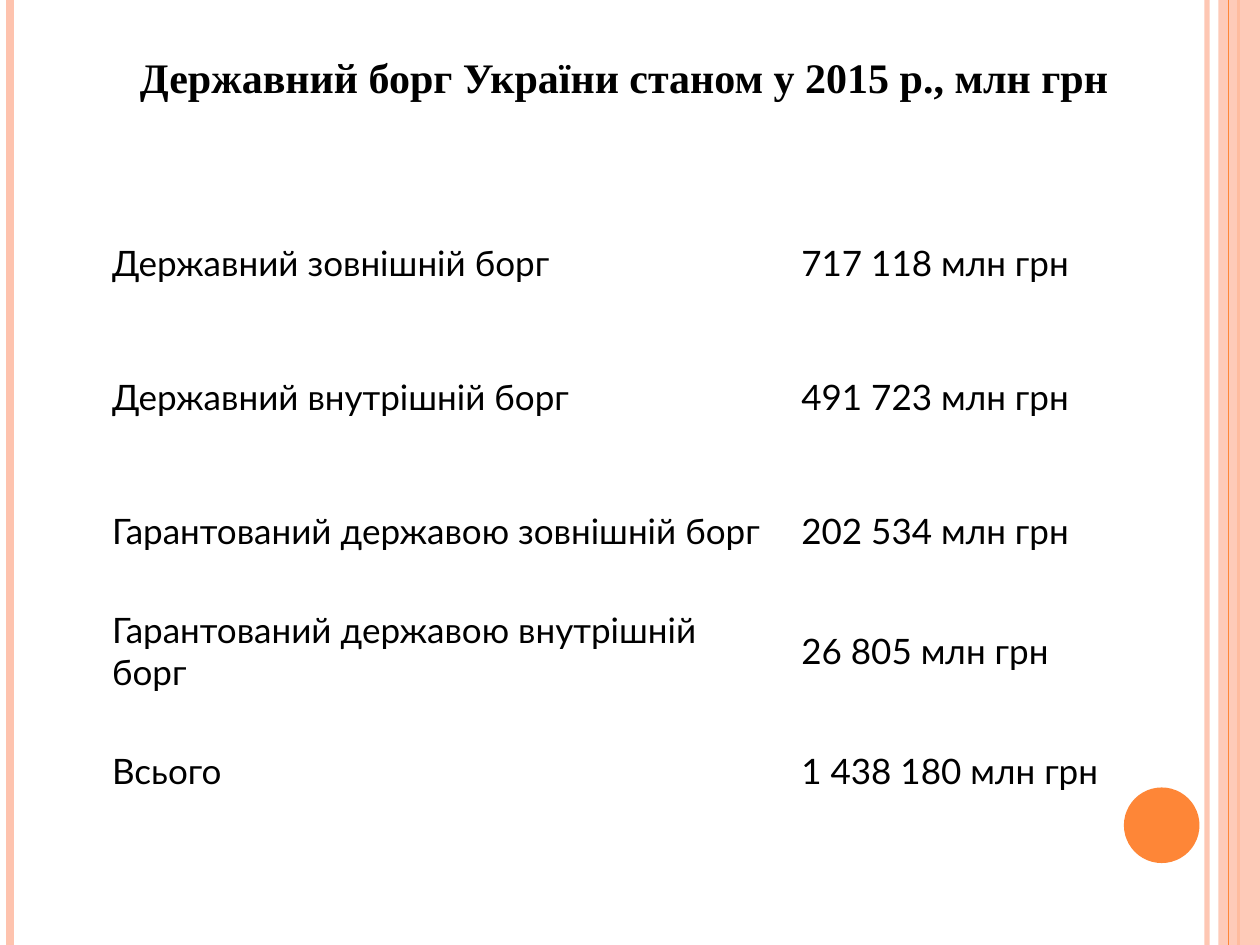
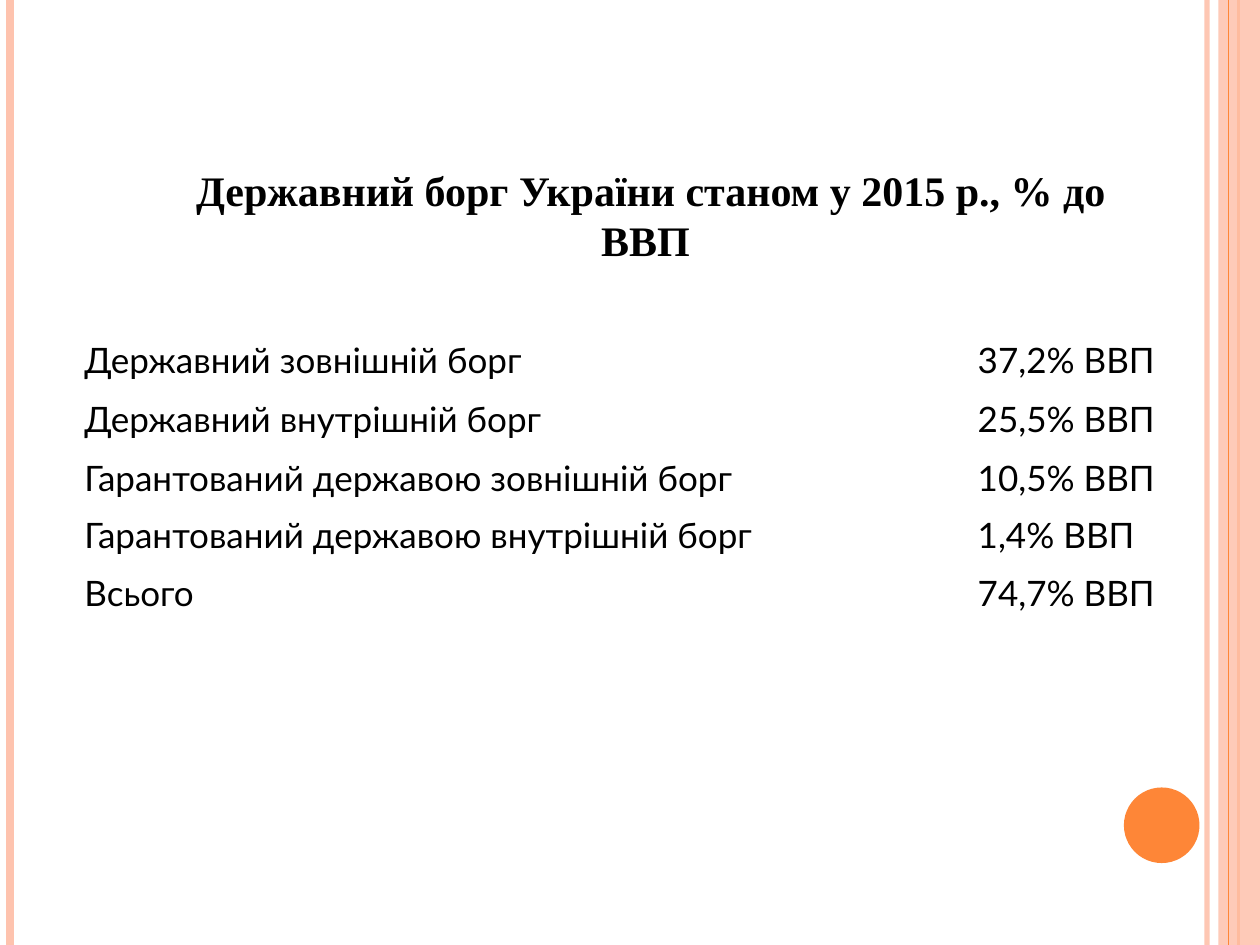
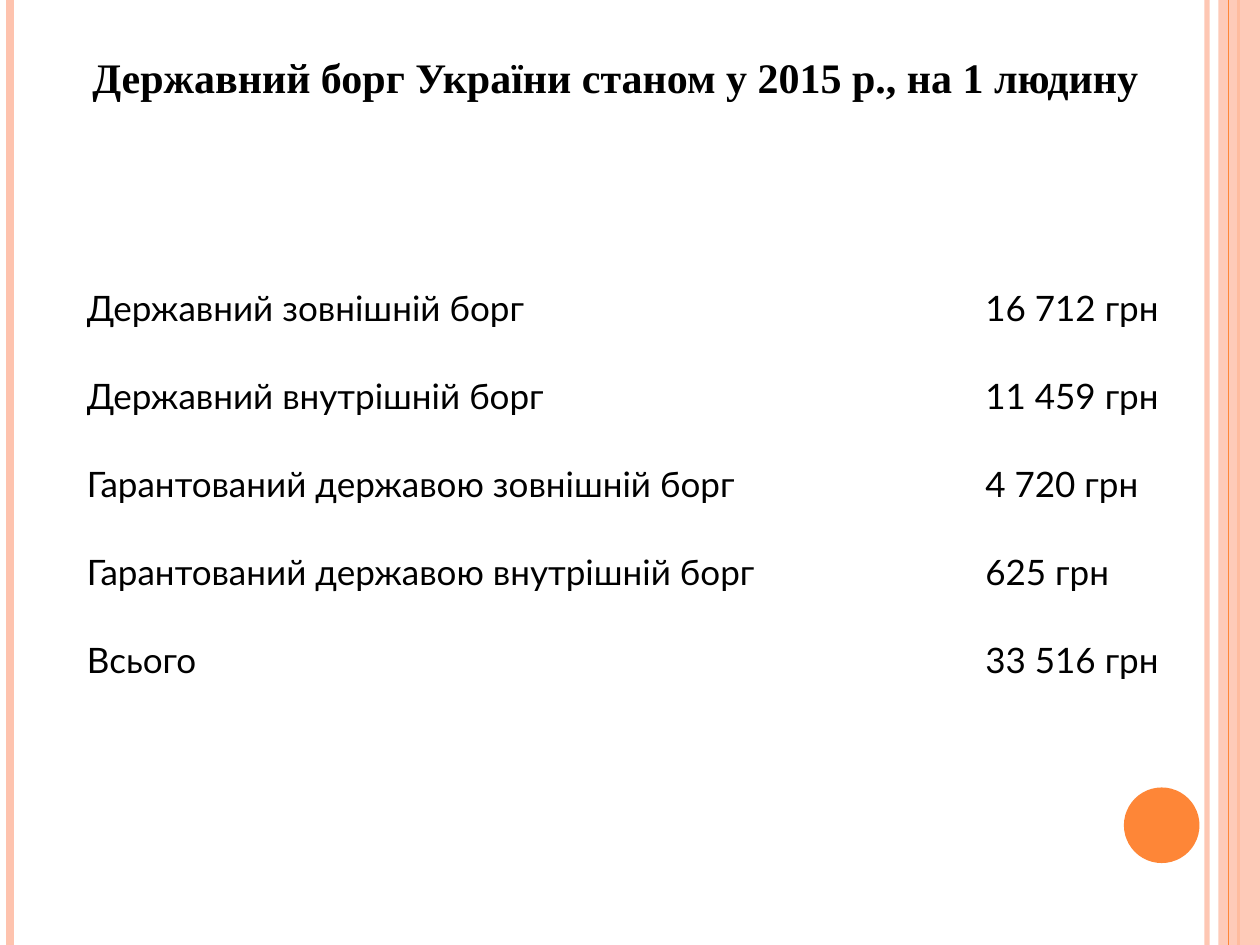
from pptx import Presentation
from pptx.dml.color import RGBColor
from pptx.enum.shapes import MSO_CONNECTOR, MSO_SHAPE
from pptx.enum.text import MSO_ANCHOR, MSO_AUTO_SIZE, PP_ALIGN
from pptx.oxml.ns import qn
from pptx.util import Inches, Pt
from lxml import etree

# Shared look
PEACH = RGBColor(0xFE, 0xC3, 0xAE)
ORANGE = RGBColor(0xFE, 0x86, 0x37)
BLACK = RGBColor(0, 0, 0)
TITLE_FONT, BODY_FONT = "Times New Roman", "Lato"
NO_GRID_STYLE = "{2D5ABB26-0587-4C30-8999-92F81FD0307C}"
SLIDE_W, SLIDE_H = 10, 7.5
DEBT_KINDS = [
    "Державний зовнішній борг",
    "Державний внутрішній борг",
    "Гарантований державою зовнішній борг",
    "Гарантований державою внутрішній борг",
    "Всього",
]


def box_inches(box):
    return [Inches(v) for v in box]


def set_opacity(shape, percent):
    color = shape.element.xpath(".//p:spPr//a:srgbClr")[0]
    etree.SubElement(color, qn("a:alpha")).set("val", str(percent * 1000))


def add_rule(s, x, color, width):
    rule = s.shapes.add_connector(
        MSO_CONNECTOR.STRAIGHT, Inches(x), 0, Inches(x), Inches(SLIDE_H))
    rule.line.color.rgb = color
    rule.line.width = Pt(width)
    etree.SubElement(rule.element.spPr, qn("a:effectLst"))
    return rule


def add_solid(s, kind, box, color):
    sp = s.shapes.add_shape(kind, *box_inches(box))
    sp.shadow.inherit = False
    sp.fill.solid()
    sp.fill.fore_color.rgb = color
    sp.line.fill.background()
    return sp


def decorate_layout(s):
    """Draw the side bands and the dot, then move them to the slide's layout."""
    thin_rule = add_rule(s, 9.58, PEACH, 3)
    set_opacity(thin_rule, 93)
    left_rule = add_rule(s, 0.08, PEACH, 4.5)
    band_rule = add_rule(s, 9.83, ORANGE, 1.5)
    band = add_solid(s, MSO_SHAPE.RECTANGLE, (9.67, 0, 0.33, SLIDE_H), PEACH)
    set_opacity(band, 87)
    inner_rule = add_rule(s, 9.75, ORANGE, 0.75)
    dot = add_solid(s, MSO_SHAPE.OVAL, (8.92, 6.25, 0.6, 0.6), ORANGE)

    parts = [thin_rule, left_rule, band_rule, band, inner_rule, dot]
    for shape_id, part in enumerate(parts, start=101):
        part.element.xpath(".//p:cNvPr")[0].set("id", str(shape_id))
        s.slide_layout.shapes.element.append(part.element)


def add_run(p, text, font, size, bold=False):
    r = p.add_run()
    r.text = text
    r.font.name = font
    r.font.size = Pt(size)
    r.font.bold = bold
    r.font.color.rgb = BLACK


def place_title(s, text, box, anchor):
    title = s.shapes.title
    title.left, title.top, title.width, title.height = box_inches(box)
    tf = title.text_frame
    tf.word_wrap = True
    tf.auto_size = MSO_AUTO_SIZE.NONE
    tf.vertical_anchor = anchor
    p = tf.paragraphs[0]
    p.alignment = PP_ALIGN.CENTER
    add_run(p, text, TITLE_FONT, 24, bold=True)


def add_debt_table(s, left, top, cols, rows, values):
    """Blank first row and column, then one row for each kind of debt."""
    box = (left, top, sum(cols), sum(rows))
    frame = s.shapes.add_table(len(rows), len(cols), *box_inches(box))
    frame.element.xpath(".//a:tableStyleId")[0].text = NO_GRID_STYLE
    table = frame.table
    table.first_row = table.horz_banding = False
    for col, width in zip(table.columns, cols):
        col.width = Inches(width)
    for row, height in zip(table.rows, rows):
        row.height = Inches(height)
    for cell in table.iter_cells():
        cell.fill.background()
        cell.vertical_anchor = MSO_ANCHOR.MIDDLE
    for i, texts in enumerate(zip(DEBT_KINDS, values), start=1):
        for j, text in enumerate(texts, start=1):
            add_run(table.cell(i, j).text_frame.paragraphs[0],
                    text, BODY_FONT, 20)


def add_debt_slide(prs, title, title_box, table, anchor=MSO_ANCHOR.TOP):
    s = prs.slides.add_slide(prs.slide_layouts[5])
    place_title(s, title, title_box, anchor)
    add_debt_table(s, **table)
    return s


def main():
    prs = Presentation()
    prs.slide_width, prs.slide_height = Inches(SLIDE_W), Inches(SLIDE_H)

    # Debt in millions of hryvnias
    s = add_debt_slide(
        prs, "Державний борг України станом у 2015 р., млн грн ",
        (0.43, 0.36, 9.13, 0.5),
        dict(left=0.5, top=1.07, cols=[0.29, 5.47, 3.46],
             rows=[0.54, 0.95, 1.18, 0.95, 0.95, 0.95],
             values=[f"{v} млн грн" for v in (
                 "717 118", "491 723", "202 534", "26 805", "1 438 180")]))
    decorate_layout(s)

    # Debt as a share of GDP
    add_debt_slide(
        prs, "Державний борг України станом у 2015 р., % до ВВП ",
        (1.22, 1.25, 7.89, 0.91),
        dict(left=0.28, top=2.18, cols=[0.29, 7.09, 1.83],
             rows=[0.44, 0.47, 0.47, 0.47, 0.44, 0.47],
             values=[f"{v}% ВВП" for v in (
                 "37,2", "25,5", "10,5", "1,4", "74,7")]),
        anchor=MSO_ANCHOR.MIDDLE)

    # Debt per person
    add_debt_slide(
        prs, "Державний борг України станом у 2015 р., на 1 людину ",
        (0.28, 0.36, 9.29, 0.5),
        dict(left=0.3, top=1.39, cols=[0.29, 7.13, 1.84], rows=[0.7] * 6,
             values=[f"{v} грн" for v in (
                 "16 712", "11 459", "4 720", "625", "33 516")]))

    prs.save("out.pptx")


if __name__ == "__main__":
    main()
